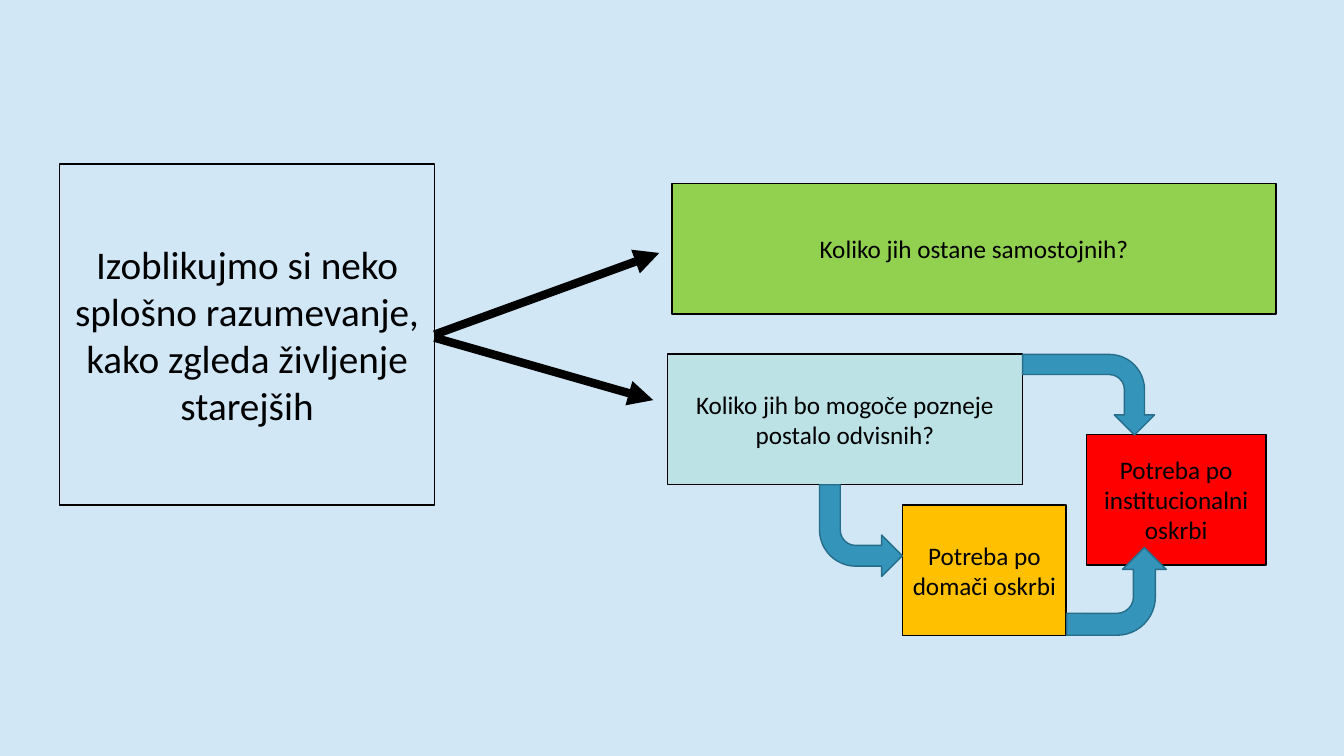
from pptx import Presentation
from pptx.dml.color import RGBColor
from pptx.enum.shapes import MSO_CONNECTOR as Link, MSO_SHAPE as Shape
from pptx.enum.text import MSO_ANCHOR as Anchor, PP_ALIGN as Align
from pptx.oxml.ns import qn
from pptx.util import Pt
from lxml.etree import SubElement

BACKGROUND = RGBColor(0xD1, 0xE7, 0xF6)
BLACK = RGBColor(0x00, 0x00, 0x00)
GREEN = RGBColor(0x92, 0xD0, 0x50)
PALE_TEAL = RGBColor(0xBC, 0xE2, 0xE6)
AMBER = RGBColor(0xFF, 0xC0, 0x00)
RED = RGBColor(0xFF, 0x00, 0x00)
BLUE = RGBColor(0x34, 0x94, 0xBA)
DARK_BLUE = RGBColor(0x26, 0x6D, 0x8A)


class CareDiagram:
    font = "Calibri"
    outline = Pt(1)
    inset = Pt(6)

    def __init__(self, page):
        self.page = page
        fill = page.background.fill
        fill.solid()
        fill.fore_color.rgb = BACKGROUND

    def shape(self, kind, place, color, line_color):
        shape = self.page.shapes.add_shape(kind, *map(Pt, place))
        shape.shadow.inherit = False
        if color is None:
            shape.fill.background()
        else:
            shape.fill.solid()
            shape.fill.fore_color.rgb = color
        shape.line.color.rgb = line_color
        shape.line.width = self.outline
        return shape

    def box(self, words, place, color=None, size=18):
        frame = self.shape(Shape.RECTANGLE, place, color, BLACK).text_frame
        frame.word_wrap = True
        frame.vertical_anchor = Anchor.MIDDLE
        frame.margin_left = frame.margin_right = self.inset
        para = frame.paragraphs[0]
        para.alignment = Align.CENTER
        span = para.add_run()
        span.text = words
        span.font.name = self.font
        span.font.size = Pt(size)
        span.font.color.rgb = BLACK

    def bent_arrow(self, place, turn, mirrored=False):
        arrow = self.shape(Shape.BENT_ARROW, place, BLUE, DARK_BLUE)
        arrow.rotation = turn
        if mirrored:
            arrow.element.spPr.find(qn("a:xfrm")).set("flipH", "1")

    def straight_arrow(self, start, end):
        arrow = self.page.shapes.add_connector(
            Link.STRAIGHT, *map(Pt, start + end))
        arrow.line.color.rgb = BLACK
        arrow.line.width = Pt(6)
        SubElement(arrow.line._get_or_add_ln(), qn("a:tailEnd"), type="triangle")
        SubElement(arrow.element.spPr, qn("a:effectLst"))


def main():
    deck = Presentation()
    deck.slide_width, deck.slide_height = Pt(960), Pt(540)
    diagram = CareDiagram(deck.slides.add_slide(deck.slide_layouts[6]))

    diagram.box("Izoblikujmo si neko splošno razumevanje, kako zgleda življenje starejših",
                (42.3, 117.2, 268.3, 243.4), size=28)
    for words, place, color in (
        ("Koliko jih ostane samostojnih?", (480, 131, 431.5, 93.5), GREEN),
        ("Koliko jih bo mogoče pozneje postalo odvisnih?", (476.8, 252.8, 253.5, 93.5), PALE_TEAL),
        ("Potreba po domači oskrbi", (644.8, 360.7, 116.8, 93.2), AMBER),
        ("Potreba po institucionalni oskrbi", (776, 310.3, 128.3, 93.2), RED),
    ):
        diagram.box(words, place, color)

    diagram.bent_arrow((585.4, 346.3, 59.2, 65.5), 180, mirrored=True)
    diagram.bent_arrow((766.2, 386.8, 62.7, 71.2), 90, mirrored=True)
    diagram.bent_arrow((748.8, 234.8, 57.6, 94.3), 90)

    diagram.straight_arrow((310.4, 239), (470.9, 180.7))
    diagram.straight_arrow((310.4, 241.2), (466.6, 285.8))

    deck.save("out.pptx")


if __name__ == "__main__":
    main()
